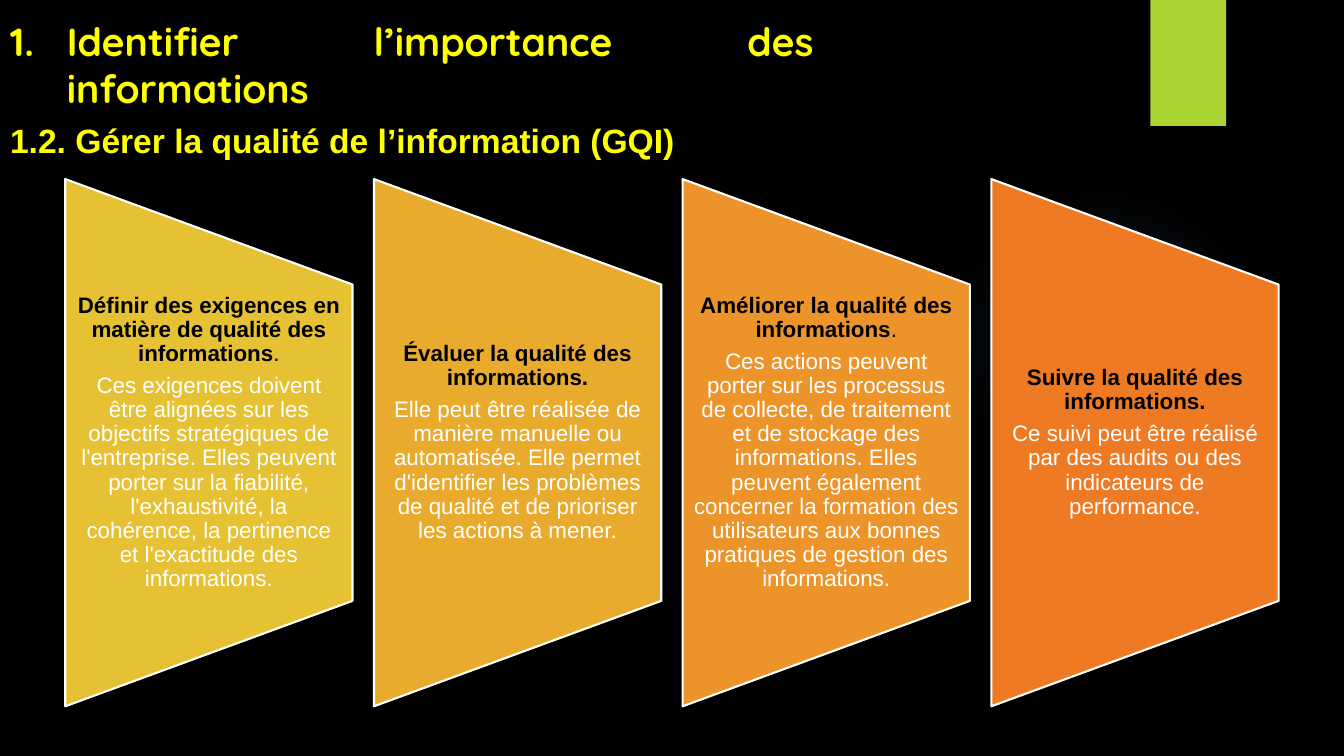
from lxml import etree
from pptx import Presentation
from pptx.dml.color import RGBColor
from pptx.enum import shapes, text
from pptx.oxml import parse_xml
from pptx.oxml.ns import nsdecls, qn
from pptx.util import Pt

BLACK = RGBColor(0x00, 0x00, 0x00)
WHITE = RGBColor(0xFF, 0xFF, 0xFF)
YELLOW = RGBColor(0xFF, 0xFF, 0x00)
LIME = RGBColor(0xAC, 0xD4, 0x33)
GOLD = RGBColor(0xE6, 0xC1, 0x33)
AMBER = RGBColor(0xE9, 0xAB, 0x2E)
ORANGE = RGBColor(0xEC, 0x94, 0x29)
RUST = RGBColor(0xEF, 0x7A, 0x24)


def add_run(para, words, **form):
    run = para.add_run()
    run.text = words
    color = form.pop("color")
    for key, value in form.items():
        setattr(run.font, key, value)
    run.font.color.rgb = color


def set_frame(frame, **form):
    form = {"word_wrap": True, "auto_size": text.MSO_AUTO_SIZE.NONE, **form}
    for key, value in form.items():
        setattr(frame, key, value)


deck = Presentation()
deck.slide_width, deck.slide_height = Pt(960), Pt(540)
slide = deck.slides.add_slide(deck.slide_layouts[5])
slide.background.fill.solid()
slide.background.fill.fore_color.rgb = BLACK

# Faint glow and green tab
glow = slide.shapes.add_shape(
    shapes.MSO_SHAPE.OVAL, Pt(677.5), Pt(131.8), Pt(221.8), Pt(221.8))
glow.shadow.inherit = False
glow.line.fill.background()
stops = "".join(
    f'<a:gs pos="{pos}000"><a:srgbClr val="7AC4F0">'
    f'<a:alpha val="{alpha}000"/></a:srgbClr></a:gs>'
    for pos, alpha in ((0, 7), (36, 6), (69, 0)))
grad = parse_xml(
    f'<a:gradFill {nsdecls("a")}><a:gsLst>{stops}</a:gsLst><a:path path="circle">'
    '<a:fillToRect l="50000" t="50000" r="50000" b="50000"/></a:path></a:gradFill>')
glow._element.spPr.find(qn("a:prstGeom")).addnext(grad)

tab = slide.shapes.add_shape(
    shapes.MSO_SHAPE.RECTANGLE, Pt(821.8), Pt(0), Pt(54), Pt(90))
tab.shadow.inherit = False
tab.fill.solid()
tab.fill.fore_color.rgb = LIME
tab.line.fill.background()

# Numbered title with its subtitle
title = slide.shapes.title
title.left, title.top, title.width, title.height = Pt(0), Pt(8.6), Pt(588.2), Pt(110)
frame = title.text_frame
set_frame(frame, vertical_anchor=text.MSO_ANCHOR.TOP, margin_left=Pt(7.2),
          margin_right=Pt(7.2), margin_top=Pt(3.6), margin_bottom=Pt(3.6))
head, sub = frame.paragraphs[0], frame.add_paragraph()
props = head._p.get_or_add_pPr()
props.set("marL", str(Pt(40.5)))
props.set("indent", str(Pt(-40.5)))
etree.SubElement(props, qn("a:buAutoNum"), type="arabicPeriod")
head.alignment = sub.alignment = text.PP_ALIGN.JUSTIFY
sub.space_before = Pt(6)
add_run(head, "Identifier l’importance des informations",
        name="Quicksand", size=Pt(28), bold=True, color=YELLOW)
add_run(sub, "1.2. Gérer la qualité de l’information (GQI)",
        name="Arial", size=Pt(24), bold=True, color=YELLOW)

# Four steps: fill, heading, whether its full stop is bold, details
steps = [
    (GOLD, "Définir des exigences en matière de qualité des informations", False,
     "Ces exigences doivent être alignées sur les objectifs stratégiques de "
     "l'entreprise. Elles peuvent porter sur la fiabilité, l'exhaustivité, la "
     "cohérence, la pertinence et l'exactitude des informations."),
    (AMBER, "Évaluer la qualité des informations", True,
     "Elle peut être réalisée de manière manuelle ou automatisée. Elle permet "
     "d'identifier les problèmes de qualité et de prioriser les actions à mener."),
    (ORANGE, "Améliorer la qualité des informations", False,
     "Ces actions peuvent porter sur les processus de collecte, de traitement et "
     "de stockage des informations. Elles peuvent également concerner la formation "
     "des utilisateurs aux bonnes pratiques de gestion des informations."),
    (RUST, "Suivre la qualité des informations", True,
     "Ce suivi peut être réalisé par des audits ou des indicateurs de performance."),
]
LEFT, STEP, WIDE, TALL, MID = 46.6, 220.5, 205.2, 376.6, 316.2
BOX = 226

for i, (color, name, strong, detail) in enumerate(steps):
    x = LEFT + i * STEP
    panel = slide.shapes.add_shape(
        shapes.MSO_SHAPE.FLOWCHART_MANUAL_OPERATION,
        Pt(x + (WIDE - TALL) / 2), Pt(MID - WIDE / 2), Pt(TALL), Pt(WIDE))
    panel.rotation = 270
    panel.shadow.inherit = False
    panel.fill.solid()
    panel.fill.fore_color.rgb = color
    panel.line.color.rgb = WHITE
    panel.line.width = Pt(1.5)

    frame = slide.shapes.add_textbox(
        Pt(x), Pt(MID - BOX / 2), Pt(WIDE), Pt(BOX)).text_frame
    set_frame(frame, vertical_anchor=text.MSO_ANCHOR.MIDDLE, margin_left=Pt(8),
              margin_right=Pt(8), margin_top=0, margin_bottom=0)
    head, body = frame.paragraphs[0], frame.add_paragraph()
    for para in (head, body):
        para.alignment = text.PP_ALIGN.CENTER
        para.line_spacing = 0.9
        para.space_after = Pt(5.6)
    form = {"name": "Arial", "size": Pt(16)}
    add_run(head, name, bold=True, color=BLACK, **form)
    add_run(head, ".", bold=strong, color=BLACK, **form)
    add_run(body, detail, bold=False, color=WHITE, **form)

deck.save("out.pptx")
